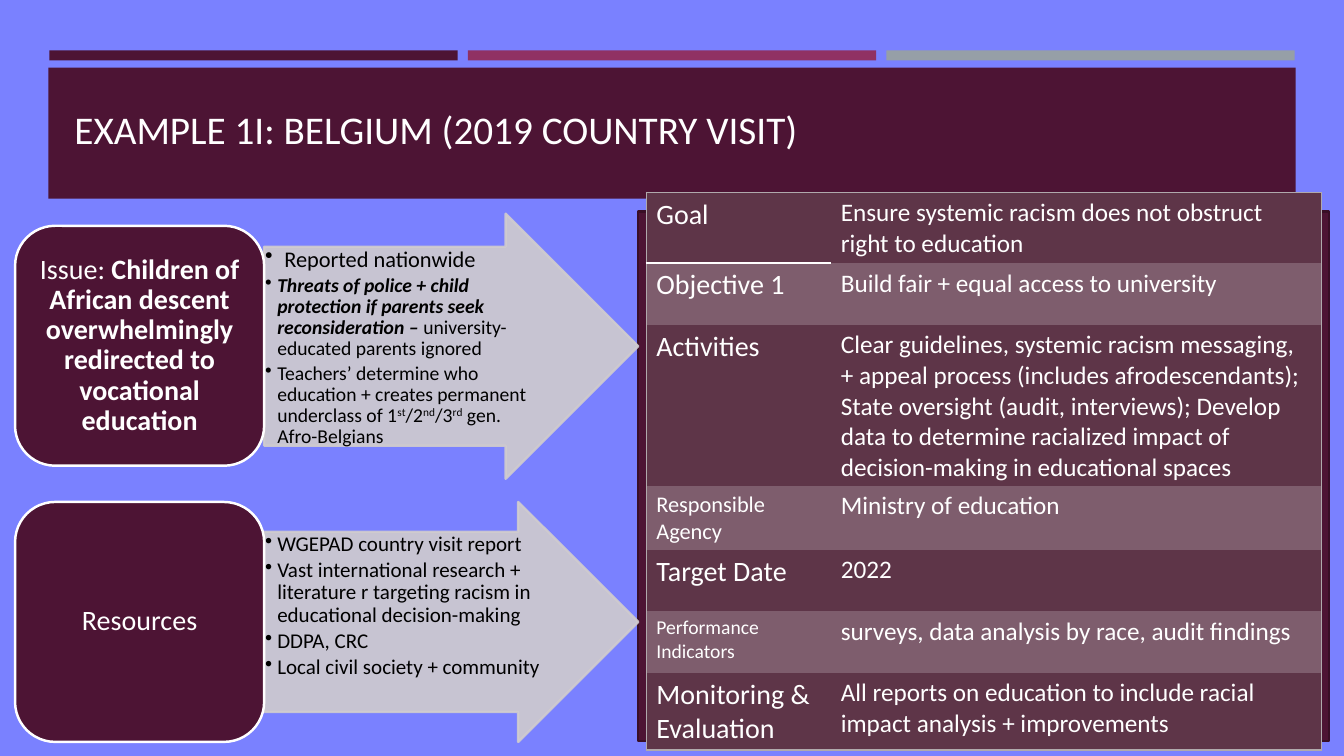
from lxml import etree
from pptx import Presentation
from pptx import util as u
from pptx.dml.color import RGBColor
from pptx.enum import shapes, text
from pptx.oxml.ns import qn

PERIWINKLE = RGBColor(0x7A, 0x81, 0xFF)
PLUM = RGBColor(0x4D, 0x14, 0x34)
DARK_PLUM = RGBColor(0x39, 0x0F, 0x26)
BERRY = RGBColor(0x90, 0x31, 0x63)
STEEL = RGBColor(0x96, 0x9F, 0xA7)
SILVER = RGBColor(0xD0, 0xCC, 0xCE)
TABLE_EDGE = RGBColor(0xB0, 0xA9, 0xAC)
ROW_DARK = RGBColor(0x5E, 0x35, 0x48)
ROW_LIGHT = RGBColor(0x7E, 0x5D, 0x6D)
WHITE = RGBColor(0xFF, 0xFF, 0xFF)
BLACK = RGBColor(0, 0, 0)

CELL = u.Inches(0.1)
PLAIN_TABLE = "{2D5ABB26-0587-4C30-8999-92F81FD0307C}"
SUPERSCRIPT = {"baseline": "30000"}
STRONG = {"bold": True}
STRONG_ITALIC = {"bold": True, "italic": True}


def apply_format(target, values):
    for name, value in values.items():
        setattr(target, name, value)


def grid(*cells):
    return [round(cell * CELL) for cell in cells]


class SlideBuilder:
    font = "Calibri"
    line_width = u.Pt(1.75)

    def __init__(self, presentation, background):
        self.slide = presentation.slides.add_slide(presentation.slide_layouts[6])
        self.slide.background.fill.solid()
        self.slide.background.fill.fore_color.rgb = background

    def box(self, kind, place, fill, line=None, opacity=None):
        shape = self.slide.shapes.add_shape(kind, *grid(*place))
        shape.shadow.inherit = False
        shape.fill.solid()
        shape.fill.fore_color.rgb = fill
        if line is None:
            shape.line.fill.background()
        else:
            shape.line.color.rgb = line
            shape.line.width = self.line_width
        if opacity:
            for color in shape._element.spPr.iter(qn("a:srgbClr")):
                etree.SubElement(color, qn("a:alpha"), val=str(opacity * 1000))
        return shape

    def frame(self, shape, insets, anchor):
        sides = ("margin_left", "margin_top", "margin_right", "margin_bottom")
        apply_format(shape.text_frame, {
            "word_wrap": True, "vertical_anchor": anchor,
            **dict(zip(sides, grid(*insets)))})
        return shape.text_frame

    def runs(self, paragraph, pieces, size, color):
        for words, style in pieces:
            run = paragraph.add_run()
            run.text = words
            run.font.color.rgb = color
            font_values = {"name": self.font, "size": u.Pt(size), **style}
            baseline = font_values.pop("baseline", None)
            apply_format(run.font, font_values)
            if baseline:
                run.font._element.set("baseline", baseline)

    def title(self, place, words):
        shape = self.slide.shapes.add_textbox(*grid(*place))
        frame = self.frame(shape, (1, 0.5, 1, 0.5), text.MSO_ANCHOR.BOTTOM)
        self.runs(frame.paragraphs[0], [(words, {})], 28, WHITE)

    def topic(self, place, pieces):
        shape = self.box(shapes.MSO_SHAPE.ROUNDED_RECTANGLE, place, PLUM, WHITE)
        frame = self.frame(shape, (0.8, 0.4, 0.8, 0.4), text.MSO_ANCHOR.MIDDLE)
        paragraph = frame.paragraphs[0]
        apply_format(paragraph, {"alignment": text.PP_ALIGN.CENTER, "line_spacing": 0.9})
        self.runs(paragraph, pieces, 20, WHITE)

    def arrow(self, place):
        shape = self.box(shapes.MSO_SHAPE.RIGHT_ARROW, place, SILVER, SILVER, 90)
        shape.adjustments[0] = 0.75
        shape.adjustments[1] = 0.5

    def bullets(self, place, items):
        shape = self.slide.shapes.add_textbox(*grid(*place))
        frame = self.frame(shape, (0.1,) * 4, text.MSO_ANCHOR.TOP)
        for index, (size, indent, pieces) in enumerate(items):
            paragraph = frame.add_paragraph() if index else frame.paragraphs[0]
            apply_format(paragraph, {"line_spacing": 0.9, "space_after": u.Pt(size * 0.15)})
            properties = paragraph._p.get_or_add_pPr()
            margin = u.Inches(indent)
            properties.set("marL", str(margin))
            properties.set("indent", str(-margin))
            etree.SubElement(properties, qn("a:buChar"), char="•")
            self.runs(paragraph, pieces, size, BLACK)

    def borders(self, cell, edges):
        properties = cell._tc.get_or_add_tcPr()
        for index, (side, (color, width)) in enumerate(edges.items()):
            line = etree.Element(qn(f"a:ln{side}"), w=str(u.Pt(width)))
            fill = etree.SubElement(line, qn("a:solidFill"))
            etree.SubElement(fill, qn("a:srgbClr"), val=str(color))
            properties.insert(index, line)

    def table(self, place, columns, row_height, rows):
        frame = self.slide.shapes.add_table(len(rows), len(columns), *grid(*place))
        table = frame.table
        apply_format(table, {"first_row": False, "horz_banding": False})
        table._tbl.tblPr.find(qn("a:tableStyleId")).text = PLAIN_TABLE
        for column, width in zip(table.columns, grid(*columns)):
            column.width = width
        edge = (TABLE_EDGE, 1)
        for row_index, (label, label_size, detail) in enumerate(rows):
            table.rows[row_index].height = grid(row_height)[0]
            for column_index, (words, size) in enumerate(((label, label_size), (detail, 18))):
                cell = table.cell(row_index, column_index)
                cell.fill.solid()
                cell.fill.fore_color.rgb = ROW_LIGHT if row_index % 2 else ROW_DARK
                self.runs(cell.text_frame.paragraphs[0], [(words, {})], size, WHITE)
                edges = {"R" if column_index else "L": edge}
                if row_index == 0:
                    edges["T"] = edge
                    if column_index == 0:
                        edges["B"] = (WHITE, 2)
                elif row_index == len(rows) - 1:
                    edges["B"] = edge
                self.borders(cell, edges)


def main():
    presentation = Presentation()
    apply_format(presentation, {"slide_width": u.Inches(13.33), "slide_height": u.Inches(7.5)})
    builder = SlideBuilder(presentation, PERIWINKLE)
    rectangle = shapes.MSO_SHAPE.RECTANGLE

    for index, color in enumerate((PLUM, BERRY, STEEL)):
        builder.box(rectangle, (4.9 + index * 41.5, 5, 40.5, 1), color)
    builder.box(rectangle, (4.8, 6.7, 123.7, 13), PLUM)
    builder.box(rectangle, (63.3, 21, 68.5, 52.5), PLUM, DARK_PLUM)
    builder.title((6.4, 4.5, 120.6, 11.1), "EXAMPLE 1I: BELGIUM (2019 COUNTRY VISIT)")

    builder.arrow((26.2, 21.2, 37.1, 26.3))
    builder.bullets((26.2, 24.5, 27.2, 19.7), [
        (16, 0.19, [("Reported nationwide", {})]),
        (14, 0.12, [
            ("Threats of police + child protection if parents seek reconsideration – ",
             STRONG_ITALIC),
            ("university-educated parents ignored", {})]),
        (14, 0.12, [
            ("Teachers’ determine who education + creates permanent underclass of 1", {}),
            ("st", SUPERSCRIPT), ("/2", {}), ("nd", SUPERSCRIPT),
            ("/3", {}), ("rd", SUPERSCRIPT), (" gen. Afro-Belgians", {})]),
    ])
    builder.topic((1.5, 22.4, 24.7, 23.8), [
        ("Issue: ", {}),
        ("Children of African descent overwhelmingly redirected to vocational education",
         STRONG)])

    builder.arrow((26.2, 49.8, 37.1, 23.8))
    resources = (
        "WGEPAD country visit report",
        "Vast international research + literature r targeting racism in "
        "educational decision-making",
        "DDPA, CRC",
        "Local civil society + community",
    )
    builder.bullets((26.2, 52.8, 28.2, 17.8),
                    [(15, 0.12, [(resource, {})]) for resource in resources])
    builder.topic((1.5, 49.8, 24.7, 23.8), [("Resources", {})])

    builder.table((64.1, 19.1, 67, 42.7), (18.3, 48.7), 6.1, [
        ("Goal", 20, "Ensure systemic racism does not obstruct right to education"),
        ("Objective 1", 20, "Build fair + equal access to university"),
        ("Activities", 20,
         "Clear guidelines, systemic racism messaging, + appeal process (includes "
         "afrodescendants); State oversight (audit, interviews); Develop data to determine "
         "racialized impact of decision-making in educational spaces"),
        ("Responsible Agency", 16, "Ministry of education"),
        ("Target Date", 20, "2022"),
        ("Performance Indicators", 14, "surveys, data analysis by race, audit findings"),
        ("Monitoring & Evaluation", 20,
         "All reports on education to include racial impact analysis + improvements"),
    ])
    presentation.save("out.pptx")


if __name__ == "__main__":
    main()
